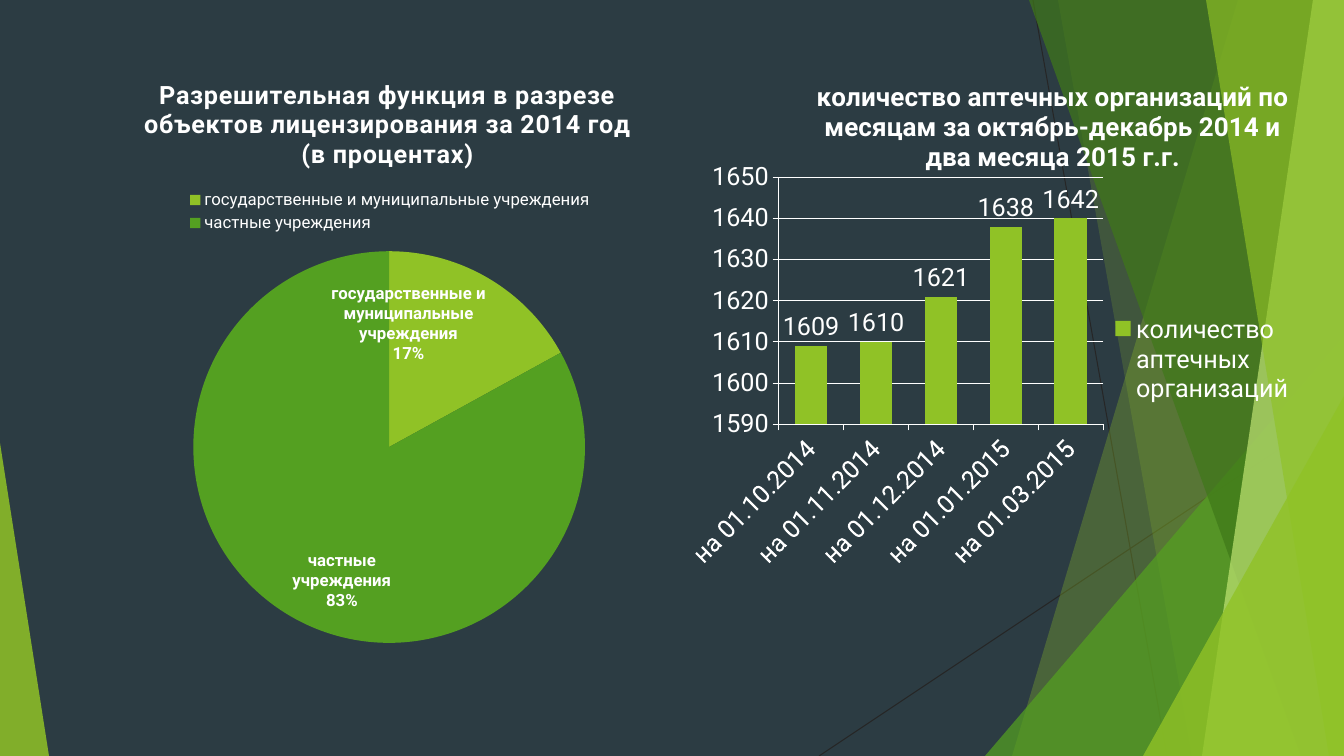
from lxml import etree
from pptx import Presentation
from pptx.chart.data import CategoryChartData
from pptx.dml.color import RGBColor
from pptx.enum.chart import XL_CHART_TYPE as ChartType
from pptx.enum.chart import XL_LABEL_POSITION as LabelPosition
from pptx.enum.chart import XL_LEGEND_POSITION as LegendPosition
from pptx.enum.chart import XL_TICK_MARK as TickMark
from pptx.enum.shapes import MSO_CONNECTOR as Connector
from pptx.enum.shapes import MSO_SHAPE as Shape
from pptx.oxml.ns import qn
from pptx.util import Pt

PX = 9071
WIDTH, HEIGHT = 1344, 756
FONT = "Roboto"
COLORS = {
    "back": "2C3C43", "line": "262626", "text": "FFFFFF", "lime": "90C226",
    "green": "54A021", "dark": "3F7819", "pale": "C0E474",
}
LINES = [((1033, 0), (1167, 756)), ((1344, 406), (819, 756))]
BANDS = [
    ("band", 1238, 1012, "lime", 30),
    ("band", 1058, 1192, "lime", 20),
    ("triangle", (985, 336, 359, 420), 1, "green", 72),
    ("band", 1029, 1301, "dark", 70),
    ("band", 1313, 1202, "pale", 70),
    ("band", 1206, 1329, "lime", 65),
    ("triangle", (1143, 396, 201, 360), 1, "lime", 80),
    ("triangle", (0, 443, 49, 313), 0, "lime", 85),
]
PIE = {
    "box": (55, 59, 665, 598),
    "title": ["Разрешительная функция в разрезе объектов лицензирования за 2014 год",
              "(в процентах)"],
    "series": "Объекты",
    "values": {"государственные и муниципальные учреждения": 17,
               "частные учреждения": 83},
    "colors": ["lime", "green"],
    "plot": (193, 251, 392, 392),
    "legend": (184, 187, 412, 49),
}
COLUMNS = {
    "box": (687, 67, 618, 586),
    "title": ["количество аптечных организаций по месяцам за октябрь-декабрь "
              "2014 и два месяца 2015 г.г."],
    "series": "количество аптечных организаций",
    "values": {"на 01.10.2014": 1609, "на 01.11.2014": 1610, "на 01.12.2014": 1621,
               "на 01.01.2015": 1638, "на 01.03.2015": 1640},
    "last_label": "1642",
    "plot": (778, 177, 325, 247),
    "title_at": (811, 74),
}


def color(name):
    return RGBColor.from_string(COLORS[name])


def emu(lengths):
    return [length * PX for length in lengths]


def set_font(font, size, bold=False):
    font.name, font.size, font.bold = FONT, Pt(size), bold
    font.color.rgb = color("text")


def paint(shape, name, opacity):
    shape.shadow.inherit = False
    shape.line.fill.background()
    shape.fill.solid()
    shape.fill.fore_color.rgb = color(name)
    tint = shape.fill._xPr.find(".//" + qn("a:srgbClr"))
    etree.SubElement(tint, qn("a:alpha"), val=str(opacity * 1000))


def draw_background(page):
    page.background.fill.solid()
    page.background.fill.fore_color.rgb = color("back")
    for start, end in LINES:
        line = page.shapes.add_connector(Connector.STRAIGHT, *emu(start + end))
        line.line.color.rgb = color("line")
        line.line.width = Pt(0.75)
        etree.SubElement(line._element.spPr, qn("a:effectLst"))
    for kind, first, second, name, opacity in BANDS:
        if kind == "band":
            outline = page.shapes.build_freeform(first, 0, scale=PX)
            outline.add_line_segments([(WIDTH, 0), (WIDTH, HEIGHT), (second, HEIGHT)])
            shape = outline.convert_to_shape()
        else:
            shape = page.shapes.add_shape(Shape.ISOSCELES_TRIANGLE, *emu(first))
            shape.adjustments[0] = second
        paint(shape, name, opacity)


def place(parent, index, frame, area, inner=False):
    for old in parent.findall(qn("c:layout")):
        parent.remove(old)
    layout = etree.Element(qn("c:layout"))
    manual = etree.SubElement(layout, qn("c:manualLayout"))
    if inner:
        etree.SubElement(manual, qn("c:layoutTarget"), val="inner")
    for axis in "xy":
        etree.SubElement(manual, qn(f"c:{axis}Mode"), val="edge")
    left, top, width, height = frame
    shares = [(area[0] - left) / width, (area[1] - top) / height]
    shares += [length / whole for length, whole in zip(area[2:], (width, height))]
    for key, share in zip("xywh", shares):
        etree.SubElement(manual, qn(f"c:{key}"), val=f"{share:.3f}")
    parent.insert(index, layout)


def add_chart(page, kind, content, title_size, legend_position, legend_size):
    data = CategoryChartData()
    data.categories = list(content["values"])
    data.add_series(content["series"], list(content["values"].values()))
    chart = page.shapes.add_chart(kind, *emu(content["box"]), data).chart
    set_font(chart.font, legend_size)
    chart.has_title = True
    frame = chart.chart_title.text_frame
    frame.text = "\n".join(content["title"])
    for para in frame.paragraphs:
        set_font(para.font, title_size, True)
    chart.has_legend = True
    chart.legend.position = legend_position
    chart.legend.include_in_layout = False
    set_font(chart.legend.font, legend_size)
    place(chart._chartSpace.chart.plotArea, 0, content["box"], content["plot"], True)
    return chart


def add_pie(page):
    chart = add_chart(page, ChartType.PIE, PIE, 18, LegendPosition.TOP, 12)
    for para in chart.chart_title.text_frame.paragraphs:
        para.font._element.set("spc", "50")
    place(chart.legend._element, 1, PIE["box"], PIE["legend"])
    chart.plots[0].vary_by_categories = True
    series = chart.plots[0].series[0]
    for index, name in enumerate(PIE["colors"]):
        fill = series.points[index].format.fill
        fill.solid()
        fill.fore_color.rgb = color(name)
    labels = series.data_labels
    labels.show_value = False
    labels.show_category_name = labels.show_percentage = True
    labels.number_format, labels.number_format_is_linked = "0%", False
    labels.position = LabelPosition.INSIDE_END
    set_font(labels.font, 12, True)
    separator = etree.Element(qn("c:separator"))
    separator.text = "\n"
    labels._element.find(qn("c:showBubbleSize")).addnext(separator)


def add_columns(page):
    chart = add_chart(page, ChartType.COLUMN_CLUSTERED, COLUMNS, 18.6,
                      LegendPosition.RIGHT, 18)
    place(chart.chart_title._element, 1, COLUMNS["box"], COLUMNS["title_at"])
    plot = chart.plots[0]
    plot.vary_by_categories = False
    plot.gap_width = 100
    series = plot.series[0]
    series.format.fill.solid()
    series.format.fill.fore_color.rgb = color("lime")
    labels = series.data_labels
    labels.show_value = True
    labels.position = LabelPosition.OUTSIDE_END
    set_font(labels.font, 18)
    last = series.points[len(COLUMNS["values"]) - 1].data_label
    last.text_frame.text = COLUMNS["last_label"]
    set_font(last.text_frame.paragraphs[0].font, 18)
    last.position = LabelPosition.OUTSIDE_END
    values, months = chart.value_axis, chart.category_axis
    values.minimum_scale, values.maximum_scale, values.major_unit = 1590, 1650, 10
    values.has_major_gridlines = True
    for axis in (values, months):
        axis.major_tick_mark = TickMark.OUTSIDE
        set_font(axis.tick_labels.font, 18)
    for part in (values, months, values.major_gridlines):
        part.format.line.color.rgb = color("text")
        part.format.line.width = Pt(0.75)
    months._element.find(qn("c:txPr")).find(qn("a:bodyPr")).set("rot", "-2700000")


def main():
    deck = Presentation()
    deck.slide_width, deck.slide_height = emu((WIDTH, HEIGHT))
    page = deck.slides.add_slide(deck.slide_layouts[6])
    draw_background(page)
    add_pie(page)
    add_columns(page)
    deck.save("out.pptx")


if __name__ == "__main__":
    main()
